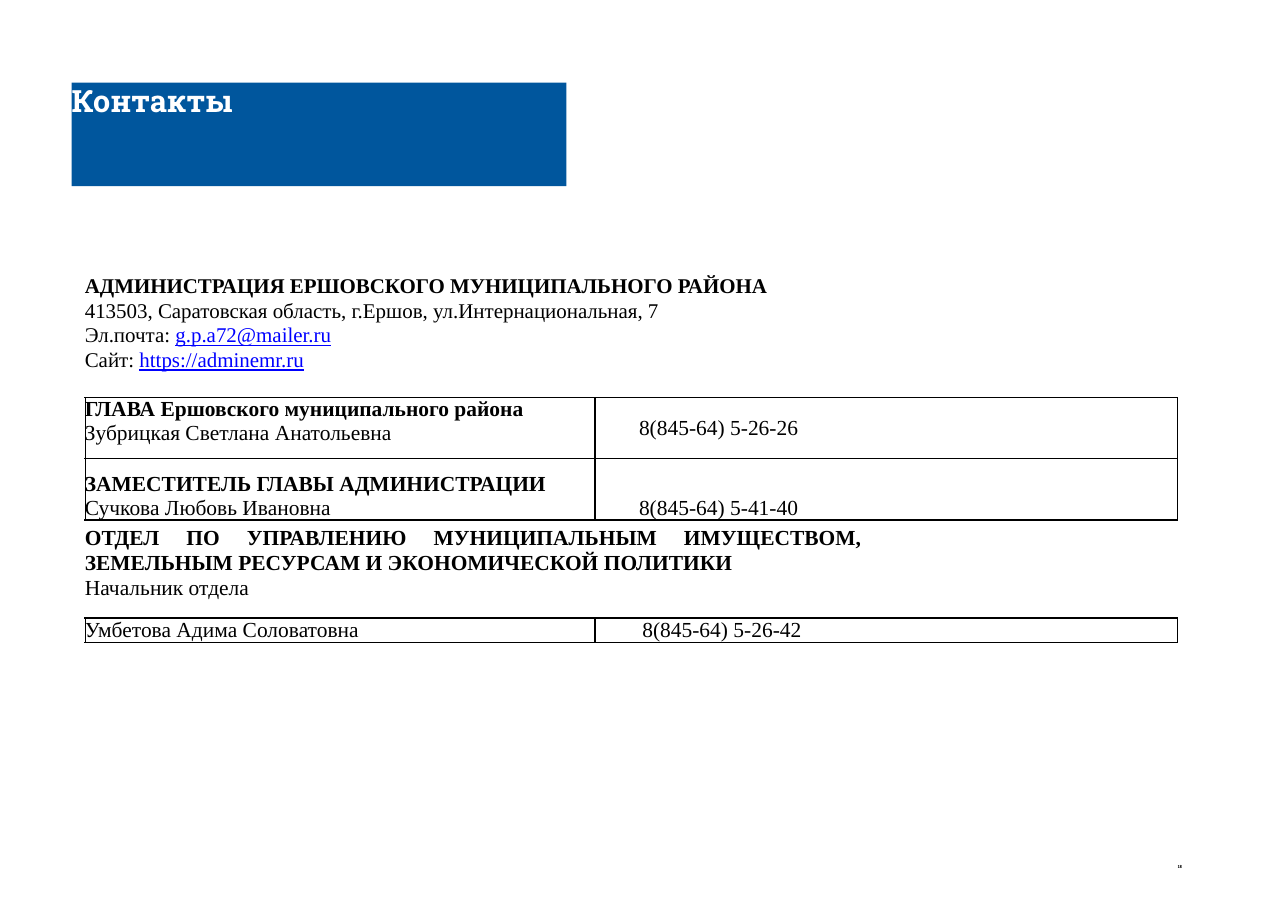
from lxml.etree import SubElement
from pptx import Presentation
from pptx.dml.color import RGBColor
from pptx.enum.shapes import MSO_SHAPE as Shape
from pptx.enum.text import MSO_ANCHOR as Anchor, PP_ALIGN as Align
from pptx.oxml.ns import qn
from pptx.util import Pt

EMU_PER_PX = 9144  # 100 px to the inch
BLUE = RGBColor(0x00, 0x56, 0x9D)
LINK_BLUE = RGBColor(0x00, 0x00, 0xFF)
WHITE = RGBColor(0xFF, 0xFF, 0xFF)
BLACK = RGBColor(0x00, 0x00, 0x00)

LEFT = 77
COLUMNS = (463, 529)
THIN, THICK = 0.5, 1
BOLD = {"bold": True}
LINK = {"underline": True, "color": LINK_BLUE}
HEADING = {"name": "Roboto Slab", "bold": True}


def px(length):
    return length * EMU_PER_PX


class ContactSlide:
    def __init__(self, presentation, font="Times New Roman", size=14):
        self.slide = presentation.slides.add_slide(presentation.slide_layouts[6])
        self.style = {"name": font, "size": size, "color": BLACK, "bold": False}

    def add_run(self, paragraph, text, style):
        for index, line in enumerate(text.split("\n")):
            if index:
                paragraph.add_line_break()
            if not line:
                continue
            run = paragraph.add_run()
            run.text = line
            values = {**self.style, **style}
            run.font.color.rgb = values.pop("color")
            values["size"] = Pt(values["size"])
            for name, value in values.items():
                setattr(run.font, name, value)

    def fill_frame(self, frame, paragraphs, spacing, style={}, align=Align.LEFT, indent=0):
        """Fill a frame with paragraphs, each a list of (text, style) runs."""
        frame.word_wrap = True
        for index, runs in enumerate(paragraphs):
            paragraph = frame.add_paragraph() if index else frame.paragraphs[0]
            paragraph.line_spacing = Pt(spacing)
            paragraph.alignment = align
            if indent:
                paragraph._p.get_or_add_pPr().set("marL", str(px(indent)))
            for text, run_style in runs:
                self.add_run(paragraph, text, {**style, **run_style})

    def clear_margins(self, holder):
        for side in ("left", "right", "top", "bottom"):
            setattr(holder, f"margin_{side}", 0)

    def add_text(self, box, paragraphs, spacing, **options):
        frame = self.slide.shapes.add_textbox(*map(px, box)).text_frame
        self.clear_margins(frame)
        self.fill_frame(frame, paragraphs, spacing, **options)

    def add_banner(self, box, text, style):
        shape = self.slide.shapes.add_shape(Shape.RECTANGLE, *map(px, box))
        shape.shadow.inherit = False
        shape.fill.solid()
        shape.fill.fore_color.rgb = BLUE
        shape.line.fill.background()
        self.clear_margins(shape.text_frame)
        shape.text_frame.vertical_anchor = Anchor.TOP
        self.fill_frame(shape.text_frame, [[(text, style)]], 23.4)

    def add_borders(self, cell, widths):
        """Draw the left, right, top and bottom borders, widths in points."""
        properties = cell._tc.get_or_add_tcPr()
        for side, width in zip("LRTB", widths):
            line = SubElement(properties, qn(f"a:ln{side}"), w=str(Pt(width)))
            fill = SubElement(line, qn("a:solidFill"))
            SubElement(fill, qn("a:srgbClr"), val=str(BLACK))

    def add_phone_table(self, top, heights, people, rules, indent):
        """Each person is (paragraphs, phone, name anchor, phone anchor)."""
        size = (LEFT, top, sum(COLUMNS), sum(heights))
        table = self.slide.shapes.add_table(len(people), 2, *map(px, size)).table
        table.first_row = table.horz_banding = False
        for column, width in zip(table.columns, COLUMNS):
            column.width = px(width)
        for index, (name, phone, *anchors) in enumerate(people):
            table.rows[index].height = px(heights[index])
            contents = (name, [[(phone, {})]])
            for column, paragraphs in enumerate(contents):
                cell = table.cell(index, column)
                self.clear_margins(cell)
                cell.vertical_anchor = anchors[column]
                self.fill_frame(cell.text_frame, paragraphs, 15.5, indent=column * indent)
                sides = (THICK, THIN) if column else (THIN, THICK)
                self.add_borders(cell, sides + rules[index:index + 2])
                cell.fill.background()


def main():
    presentation = Presentation()
    presentation.slide_width, presentation.slide_height = px(1169), px(827)
    slide = ContactSlide(presentation)

    slide.add_banner((65, 75, 449, 94), "Контакты",
                     {**HEADING, "size": 20, "color": WHITE})
    slide.add_text((LEFT, 248, 644, 92), [
        [("АДМИНИСТРАЦИЯ ЕРШОВСКОГО МУНИЦИПАЛЬНОГО РАЙОНА", BOLD)],
        [("413503, Саратовская область, г.Ершов, ул.Интернациональная, 7\n"
          "Эл.почта: ", {}),
         ("g.p.a72@mailer.ru", LINK),
         ("\nСайт: ", {}),
         ("https://adminemr.ru", LINK)],
    ], 16.1, style={"size": 13.7})
    slide.add_phone_table(361, (55, 56), [
        ([[("ГЛАВА Ершовского муниципального района", BOLD)],
          [("Зубрицкая Светлана Анатольевна", {})]],
         "8(845-64) 5-26-26", Anchor.TOP, Anchor.MIDDLE),
        ([[("ЗАМЕСТИТЕЛЬ ГЛАВЫ АДМИНИСТРАЦИИ", BOLD)],
          [("Сучкова Любовь Ивановна", {})]],
         "8(845-64) 5-41-40", Anchor.BOTTOM, Anchor.BOTTOM),
    ], rules=(THIN, THIN, THICK), indent=40)
    slide.add_text((LEFT, 477, 705, 82), [
        [("ОТДЕЛ ПО УПРАВЛЕНИЮ МУНИЦИПАЛЬНЫМ ИМУЩЕСТВОМ,\n"
          "ЗЕМЕЛЬНЫМ РЕСУРСАМ И ЭКОНОМИЧЕСКОЙ ПОЛИТИКИ", BOLD)],
        [("Начальник отдела", {})],
    ], 16.1, align=Align.JUSTIFY)
    slide.add_phone_table(561, (22,), [
        ([[("Умбетова Адима Соловатовна", {})]],
         "8(845-64) 5-26-42", Anchor.TOP, Anchor.TOP),
    ], rules=(THICK, THICK), indent=43)
    slide.add_text((1069, 771, 23, 16), [[("18", HEADING)]], 12.9,
                   style={"size": 2.8})

    presentation.save("out.pptx")


if __name__ == "__main__":
    main()
